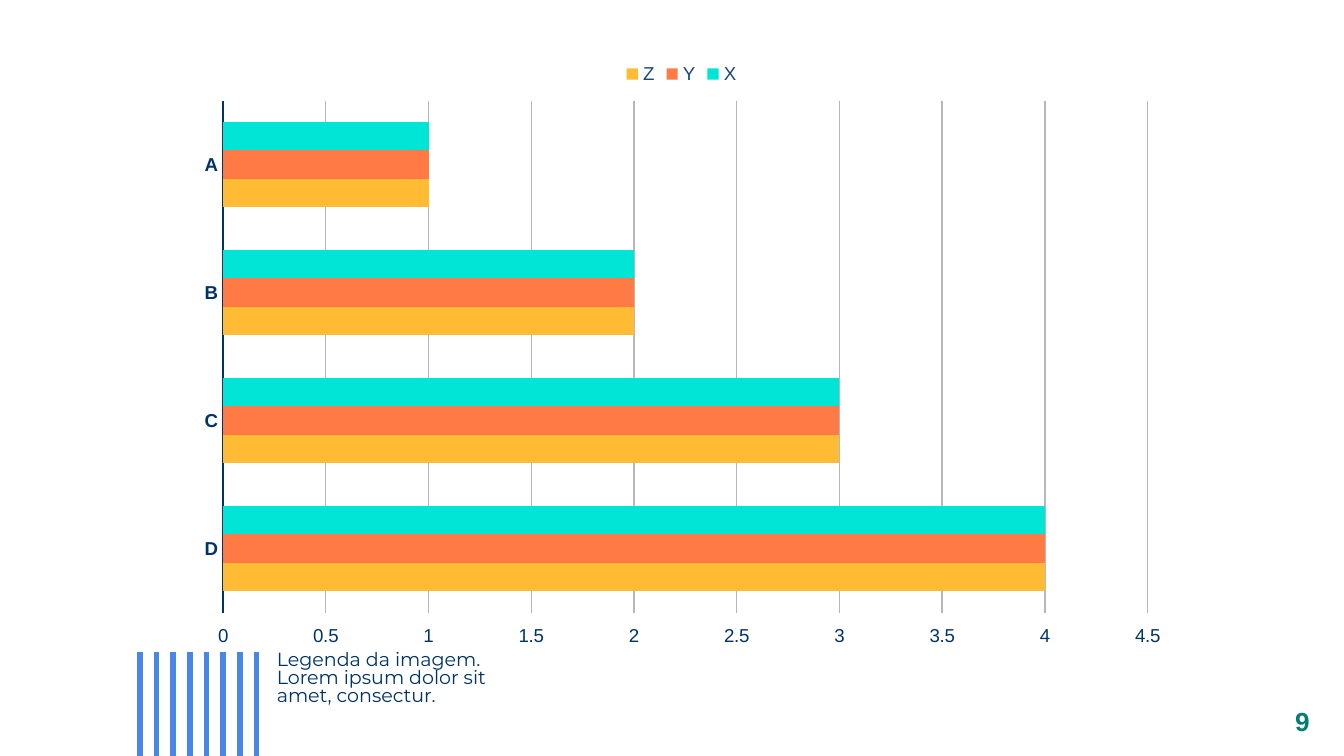
"""Build a slide with a clustered bar chart, a striped corner and a caption."""
from dataclasses import dataclass

from lxml import etree
from pptx import Presentation
from pptx.chart.data import CategoryChartData
from pptx.dml.color import RGBColor as RGB
from pptx.enum.chart import XL_CHART_TYPE as ChartType
from pptx.enum.chart import XL_LEGEND_POSITION as LegendPosition
from pptx.enum.chart import XL_TICK_LABEL_POSITION as LabelPosition
from pptx.enum.chart import XL_TICK_MARK as TickMark
from pptx.enum.shapes import MSO_CONNECTOR as Connector
from pptx.enum.shapes import MSO_SHAPE as Shape
from pptx.enum.text import MSO_ANCHOR as Anchor
from pptx.enum.text import PP_ALIGN as Align
from pptx.oxml.ns import qn
from pptx.util import Inches, Pt


@dataclass(frozen=True)
class Theme:
    navy: RGB = RGB.from_string("003366")
    legend: RGB = RGB.from_string("1A4775")
    stripe: RGB = RGB.from_string("4A86E8")
    green: RGB = RGB.from_string("007E71")
    grid: RGB = RGB.from_string("B7B7B7")
    white: RGB = RGB.from_string("FFFFFF")
    series: tuple = ("00E5D6", "FF7A45", "FFBB33")
    chart_font: str = "Arial"
    caption_font: str = "Montserrat"
    chart_size: float = 10
    caption_size: float = 10.2
    number_size: float = 14


def style_font(font, name, size, color, bold=False):
    font.name, font.size, font.bold = name, Pt(size), bold
    font.color.rgb = color


theme = Theme()
presentation = Presentation()
presentation.slide_width = Inches(10)
presentation.slide_height = Inches(10) * 9 // 16
slide = presentation.slides.add_slide(presentation.slide_layouts[6])

stripe_count, first_x, last_x = 8, 1.04, 1.91
for index in range(stripe_count):
    x = Inches(first_x + index * (last_x - first_x) / (stripe_count - 1))
    stripe = slide.shapes.add_connector(
        Connector.STRAIGHT, x, Inches(4.85), x, presentation.slide_height)
    stripe.line.color.rgb = theme.stripe
    stripe.line.width = Pt(3)
    etree.SubElement(stripe._element.spPr, qn("a:effectLst"))

number_top = Inches(5.1)
number_box = slide.shapes.add_shape(
    Shape.RECTANGLE, Inches(9.38), number_top,
    Inches(0.62), presentation.slide_height - number_top)
number_box.shadow.inherit = False
number_box.fill.solid()
number_box.fill.fore_color.rgb = theme.white
number_box.line.fill.background()
number_frame = number_box.text_frame
number_frame.margin_left = number_frame.margin_right = Inches(0.1)
number_frame.margin_top = number_frame.margin_bottom = Inches(0.1)
number_frame.text = "9"
number_frame.vertical_anchor = Anchor.MIDDLE
number_paragraph = number_frame.paragraphs[0]
number_paragraph.alignment = Align.CENTER
style_font(number_paragraph.runs[0].font, theme.chart_font,
           theme.number_size, theme.green, True)

caption = slide.shapes.add_textbox(
    Inches(2.06), Inches(4.85), Inches(1.76), Inches(0.66))
caption_frame = caption.text_frame
caption_frame.word_wrap = True
caption_frame.margin_left = caption_frame.margin_right = caption_frame.margin_top = 0
caption_frame.margin_bottom = Inches(0.1)
caption_frame.text = "Legenda da imagem. Lorem ipsum dolor sit amet, consectur."
caption_paragraph = caption_frame.paragraphs[0]
caption_paragraph.line_spacing = 0.8
caption_paragraph.space_after = Pt(10)
style_font(caption_paragraph.runs[0].font, theme.caption_font,
           theme.caption_size, theme.navy)

chart_data = CategoryChartData()
chart_data.categories = ["A", "B", "C", "D"]
for name in ("X", "Y", "Z"):
    chart_data.add_series(name, (1, 2, 3, 4))
chart = slide.shapes.add_chart(
    ChartType.BAR_CLUSTERED, Inches(1.37), Inches(0.36),
    Inches(7.4), Inches(4.49), chart_data).chart
chart.has_title = False
style_font(chart.font, theme.chart_font, theme.chart_size, theme.navy)

chart.has_legend = True
chart.legend.position = LegendPosition.TOP
chart.legend.include_in_layout = False
style_font(chart.legend.font, theme.chart_font, theme.chart_size, theme.legend)

plot = chart.plots[0]
plot.gap_width = 150
plot.overlap = 0
plot.vary_by_categories = False
for series, color in zip(plot.series, theme.series):
    series.format.fill.solid()
    series.format.fill.fore_color.rgb = RGB.from_string(color)

category_axis, value_axis = chart.category_axis, chart.value_axis
for axis, bold in ((category_axis, True), (value_axis, False)):
    axis.major_tick_mark = axis.minor_tick_mark = TickMark.NONE
    style_font(axis.tick_labels.font, theme.chart_font,
               theme.chart_size, theme.navy, bold)
category_axis.reverse_order = True
category_axis.format.line.color.rgb = theme.navy
category_axis.format.line.width = Pt(0.75)
value_axis.tick_label_position = LabelPosition.HIGH
value_axis.minimum_scale, value_axis.maximum_scale = 0, 4.5
value_axis.major_unit = 0.5
value_axis.format.line.fill.background()
value_axis.has_major_gridlines = True
value_axis.major_gridlines.format.line.color.rgb = theme.grid
value_axis.major_gridlines.format.line.width = Pt(0.75)

plot_area = chart._chartSpace.chart.plotArea
for old_layout in plot_area.findall(qn("c:layout")):
    plot_area.remove(old_layout)
layout = etree.Element(qn("c:layout"))
plot_area.insert(0, layout)
manual_layout = etree.SubElement(layout, qn("c:manualLayout"))
for tag, value in (("layoutTarget", "inner"), ("xMode", "edge"), ("yMode", "edge"),
                   ("x", 0.29 / 7.4), ("y", 0.39 / 4.49),
                   ("w", 6.88 / 7.4), ("h", 3.81 / 4.49)):
    etree.SubElement(manual_layout, qn(f"c:{tag}")).set("val", str(value))

presentation.save("out.pptx")
